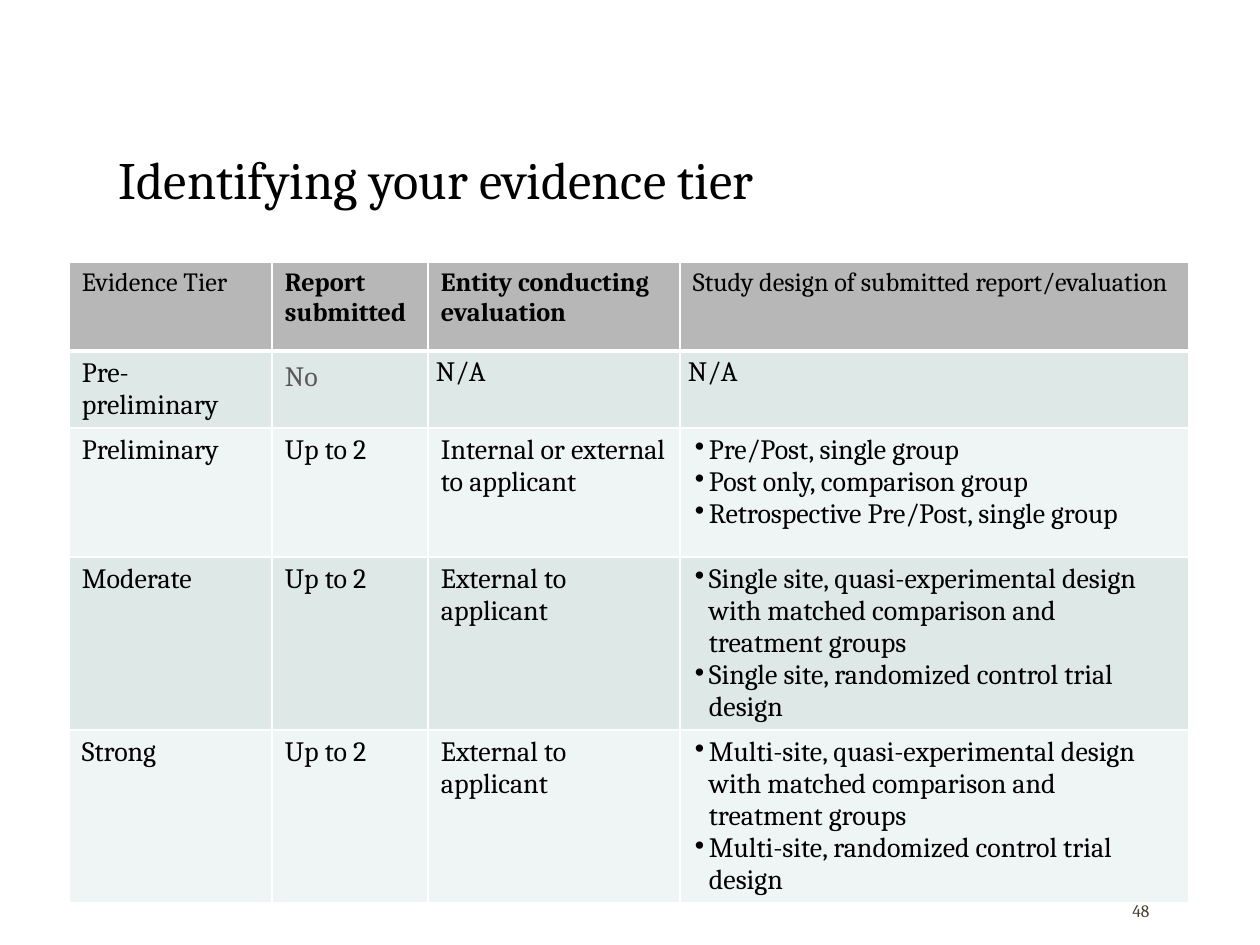
from dataclasses import dataclass

from lxml.etree import SubElement
from pptx import Presentation
from pptx.dml.color import RGBColor
from pptx.enum.text import MSO_ANCHOR as Anchor, MSO_AUTO_SIZE as AutoSize, PP_ALIGN as Align
from pptx.oxml.ns import qn
from pptx.util import Emu, Pt

PX_PER_INCH = 126
FONT = "Cambria"
BLACK, WHITE, GREY = "000000", "FFFFFF", "595959"
HEADER_FILL = "B7B7B7"
BAND_FILLS = ("DEE8E7", "EFF4F4")
PADDING = (13, 6)
NARROW_PADDING = (8, 0)
COLUMN_WIDTHS = (203, 156, 252, 509)
ROW_HEIGHTS = (89, 77, 129, 173, 172)


@dataclass(frozen=True)
class Entry:
    lines: tuple[str, ...]
    size: int = 16
    color: str = BLACK
    bold: bool = False
    bullets: bool = False
    spacing: float = 1.0
    padding: tuple[int, int] = PADDING


def header(text: str, bold: bool = False) -> Entry:
    return Entry((text,), size=15, bold=bold)


def plain(text: str) -> Entry:
    return Entry((text,))


def bullets(*lines: str) -> Entry:
    return Entry(lines, bullets=True)


NOT_APPLICABLE = Entry(("N/A",), spacing=1.15, padding=NARROW_PADDING)


def tier(name: str, entity: str, *designs: str) -> tuple[Entry, ...]:
    return plain(name), plain("Up to 2"), plain(entity), bullets(*designs)


ROWS = (
    (
        header("Evidence Tier"),
        header("Report submitted", bold=True),
        header("Entity conducting evaluation", bold=True),
        header("Study design of submitted report/evaluation"),
    ),
    (
        plain("Pre- preliminary"),
        Entry(("No",), color=GREY, spacing=1.15),
        NOT_APPLICABLE,
        NOT_APPLICABLE,
    ),
    tier(
        "Preliminary",
        "Internal or external to applicant",
        "Pre/Post, single group",
        "Post only, comparison group",
        "Retrospective Pre/Post, single group",
    ),
    tier(
        "Moderate",
        "External to applicant",
        "Single site, quasi-experimental design with matched comparison and treatment groups",
        "Single site, randomized control trial design",
    ),
    tier(
        "Strong",
        "External to applicant",
        "Multi-site, quasi-experimental design with matched comparison and treatment groups",
        "Multi-site, randomized control trial design",
    ),
)


def px(length: int) -> Emu:
    return Emu(round(length * 914400 / PX_PER_INCH))


def rgb(color: str) -> RGBColor:
    return RGBColor.from_string(color)


def write(para, text: str, *, size: int, color: str = BLACK, bold: bool = False,
          spacing: float = 1.0) -> None:
    para.alignment = Align.LEFT
    para.line_spacing = spacing
    span = para.add_run()
    span.text = text
    span.font.name = FONT
    span.font.size = Pt(size)
    span.font.bold = bold
    span.font.color.rgb = rgb(color)


def add_bullet(para) -> None:
    properties = para._p.get_or_add_pPr()
    properties.set("marL", str(px(16)))
    properties.set("indent", str(-px(14)))
    bullet_color = SubElement(properties, qn("a:buClr"))
    SubElement(bullet_color, qn("a:srgbClr"), val=BLACK)
    SubElement(properties, qn("a:buChar"), char="•")


def set_borders(cell, top: int, bottom: int) -> None:
    properties = cell._tc.get_or_add_tcPr()
    for side, width in (("L", 1), ("R", 1), ("T", top), ("B", bottom)):
        line = SubElement(properties, qn(f"a:ln{side}"), w=str(Pt(width)))
        fill = SubElement(line, qn("a:solidFill"))
        SubElement(fill, qn("a:srgbClr"), val=WHITE)


def fill_cell(cell, entry: Entry, fill: str) -> None:
    cell.fill.solid()
    cell.fill.fore_color.rgb = rgb(fill)
    cell.vertical_anchor = Anchor.TOP
    across, down = entry.padding
    cell.margin_left = cell.margin_right = px(across)
    cell.margin_top = cell.margin_bottom = px(down)
    frame = cell.text_frame
    for index, text in enumerate(entry.lines):
        para = frame.add_paragraph() if index else frame.paragraphs[0]
        write(para, text, size=entry.size, color=entry.color, bold=entry.bold,
              spacing=entry.spacing)
        if entry.bullets:
            add_bullet(para)


def add_title(page) -> None:
    title = page.shapes.title
    title.left, title.top, title.width, title.height = map(px, (106, 81, 1004, 207))
    frame = title.text_frame
    frame.auto_size = AutoSize.NONE
    frame.vertical_anchor = Anchor.MIDDLE
    write(frame.paragraphs[0], "Identifying your evidence tier", size=30, spacing=0.8)


def add_tiers(page) -> None:
    area = map(px, (69, 262, sum(COLUMN_WIDTHS), sum(ROW_HEIGHTS)))
    table = page.shapes.add_table(len(ROWS), len(COLUMN_WIDTHS), *area).table
    table.first_row = table.horz_banding = False
    for column, width in zip(table.columns, COLUMN_WIDTHS):
        column.width = px(width)
    for index, (row, height, entries) in enumerate(zip(table.rows, ROW_HEIGHTS, ROWS)):
        row.height = px(height)
        fill = BAND_FILLS[(index - 1) % 2] if index else HEADER_FILL
        for cell, entry in zip(row.cells, entries):
            set_borders(cell, top=3 if index == 1 else 1, bottom=1 if index else 3)
            fill_cell(cell, entry, fill)


def add_page_number(page) -> None:
    box = page.shapes.add_textbox(*map(px, (1120, 892, 101, 38)))
    frame = box.text_frame
    frame.word_wrap = True
    frame.vertical_anchor = Anchor.MIDDLE
    write(frame.paragraphs[0], "48", size=10, color="464132")


def main() -> None:
    deck = Presentation()
    deck.slide_width, deck.slide_height = px(1260), px(945)
    page = deck.slides.add_slide(deck.slide_layouts[5])
    add_title(page)
    add_tiers(page)
    add_page_number(page)
    deck.save("out.pptx")


if __name__ == "__main__":
    main()
